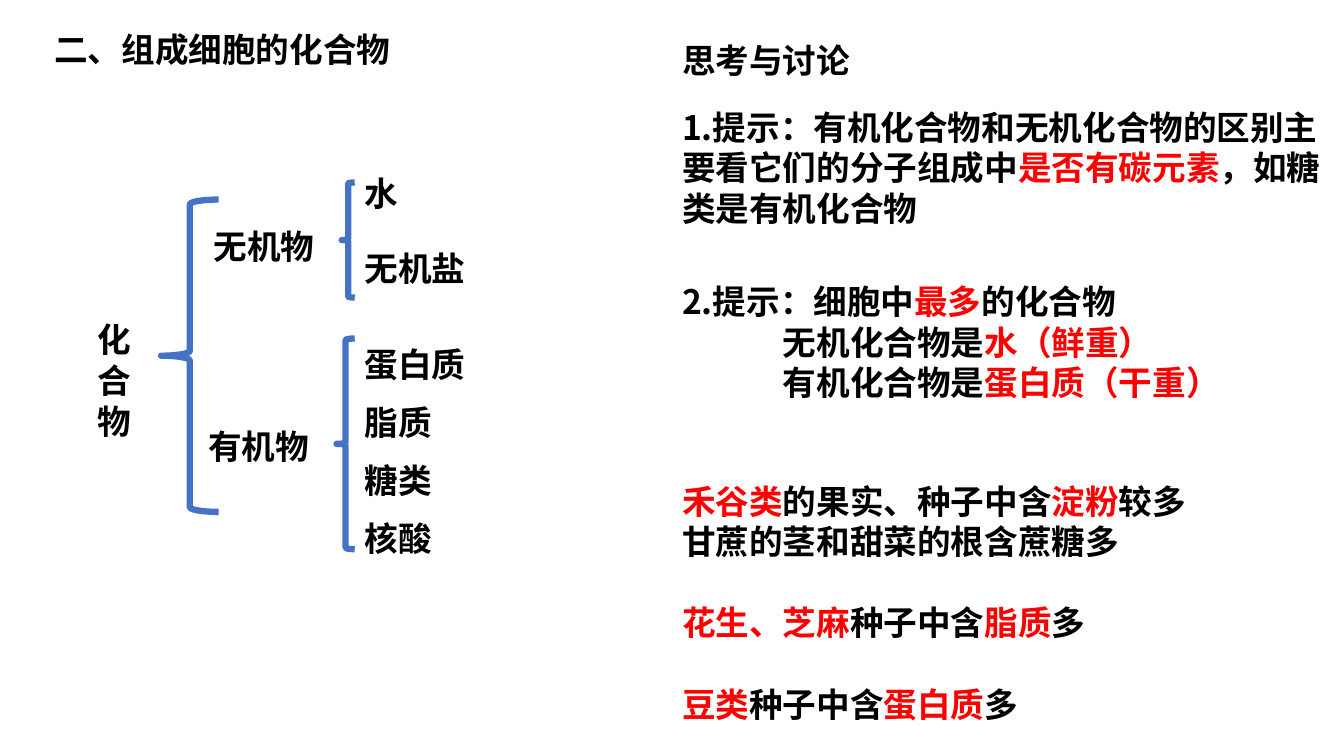
"""Slide on the compounds that make up a cell, with discussion notes."""
from lxml import etree
from pptx import Presentation
from pptx.dml.color import RGBColor
from pptx.enum.shapes import MSO_SHAPE
from pptx.enum.text import MSO_ANCHOR
from pptx.oxml.ns import qn
from pptx.util import Cm, Pt

BLACK = RGBColor(0x00, 0x00, 0x00)
RED = RGBColor(0xFF, 0x00, 0x00)
BLUE = RGBColor(0x44, 0x72, 0xC4)
FONT = "Noto Sans CJK SC"
LINE = Pt(29)
NOTES_LEFT, NOTES_WIDTH = 16.94, 16.94
LEAF_LEFT = 8.94

prs = Presentation()
prs.slide_width, prs.slide_height = Cm(33.87), Cm(19.05)
s = prs.slides.add_slide(prs.slide_layouts[6])


def add_text(left, top, width, height, lines, wrap=False):
    """Add bold lines in which every second part between bars is red."""
    sp = s.shapes.add_textbox(Cm(left), Cm(top), Cm(width), Cm(height))
    tf = sp.text_frame
    tf.word_wrap = wrap
    tf.vertical_anchor = MSO_ANCHOR.TOP
    tf.margin_top, tf.margin_bottom = Cm(0.19), Cm(0.06)
    for i, line in enumerate(lines):
        p = tf.paragraphs[0] if i == 0 else tf.add_paragraph()
        p.line_spacing = LINE
        for j, part in enumerate(line.split("|")):
            if part:
                r = p.add_run()
                r.text = part
                r.font.name, r.font.size, r.font.bold = FONT, Pt(24), True
                r.font.color.rgb = RED if j % 2 else BLACK
                ea = etree.SubElement(r.font._element, qn("a:ea"))
                ea.set("typeface", FONT)
    return tf.paragraphs


add_text(1.12, 0.53, 9.07, 1.27, ["二、组成细胞的化合物"])
add_text(NOTES_LEFT, 0.81, 4.78, 1.27, ["思考与讨论"])

add_text(NOTES_LEFT, 2.49, NOTES_WIDTH, 3.33, [
    "1.提示：有机化合物和无机化合物的区别主要看它们的分子组成中"
    "|是否有碳元素|，如糖类是有机化合物",
], wrap=True)

most = add_text(NOTES_LEFT, 6.88, NOTES_WIDTH, 4.37, [
    "2.提示：细胞中|最多|的化合物",
    "无机化合物是|水（鲜重）",
    "有机化合物是|蛋白质（干重）",
], wrap=True)
for p in most[1:]:
    p._p.get_or_add_pPr().set("marL", str(Cm(2.54)))

foods = add_text(NOTES_LEFT, 11.91, NOTES_WIDTH, 6.4, [
    "|禾谷类|的果实、种子中含|淀粉|较多",
    "甘蔗的茎和甜菜的根含蔗糖多",
    "|花生、芝麻|种子中含|脂质|多",
    "|豆类|种子中含|蛋白质|多",
], wrap=True)
for p in foods[2:]:
    p.space_before = LINE

add_text(2.21, 7.85, 1.37, 3.33, ["化", "合", "物"])
add_text(5.13, 5.49, 3.07, 1.27, ["无机物"])
add_text(5.0, 10.54, 3.07, 1.27, ["有机物"])

for first_top, step, leaves in (
    (4.17, 1.88, ["水", "无机盐"]),
    (8.48, 1.46, ["蛋白质", "脂质", "糖类", "核酸"]),
):
    for i, leaf in enumerate(leaves):
        width = 0.52 + 0.85 * len(leaf)
        add_text(LEAF_LEFT, first_top + i * step, width, 1.27, [leaf])

for left, top, width, height in (
    (4.06, 5.03, 1.45, 7.87),
    (8.61, 4.6, 0.33, 2.9),
    (8.48, 8.53, 0.46, 5.31),
):
    sp = s.shapes.add_shape(MSO_SHAPE.LEFT_BRACE, Cm(left), Cm(top), Cm(width), Cm(height))
    sp.shadow.inherit = False
    sp.fill.background()
    sp.line.color.rgb = BLUE
    sp.line.width = Pt(4.5)

prs.save("out.pptx")
